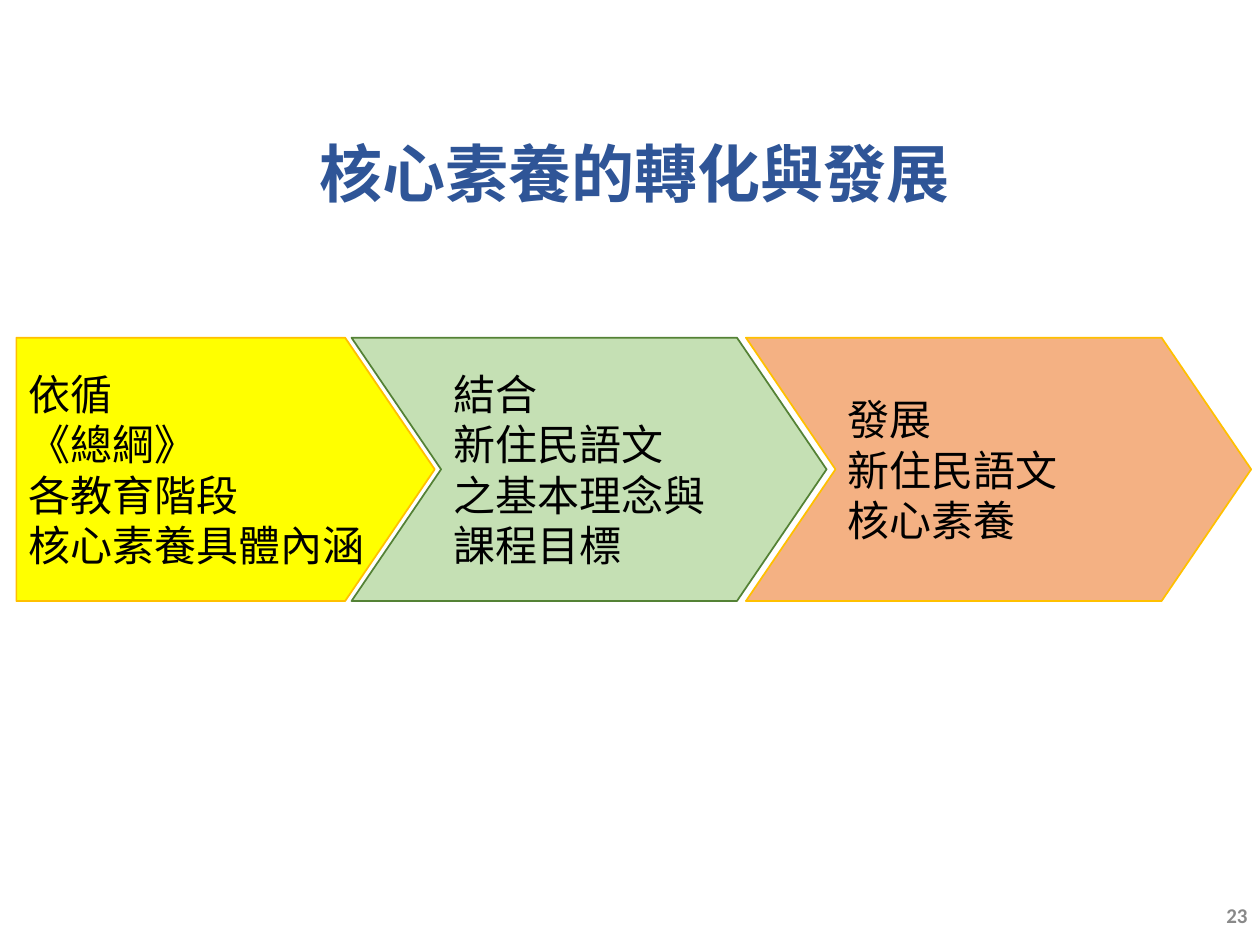
from lxml.etree import SubElement
from pptx import Presentation
from pptx.dml.color import RGBColor as RGB
from pptx.enum.shapes import MSO_SHAPE as Shape
from pptx.enum.text import MSO_ANCHOR as Anchor, PP_ALIGN as Align
from pptx.oxml.ns import qn
from pptx.util import Inches, Pt

# Content
TITLE = "核心素養的轉化與發展"
PAGE = "23"
# kind, left, width, fill, line, lines of text
STEPS = [
    (Shape.PENTAGON, 0.13, 3.32, "yellow", "gold",
     ["依循", "《總綱》", "各教育階段", "核心素養具體內涵"]),
    (Shape.CHEVRON, 2.79, 3.77, "green", "moss",
     ["結合", "新住民語文", "之基本理念與課程目標"]),
    (Shape.CHEVRON, 5.92, 4.01, "peach", "gold",
     ["發展", "新住民語文", "核心素養"]),
]
TOP, HIGH, POINT = 2.68, 2.09, 0.34

THEME = {
    "color": {"blue": "2F5597", "gray": "898989", "black": "000000",
              "yellow": "FFFF00", "green": "C5E0B4", "peach": "F4B183",
              "gold": "FFC000", "moss": "548235"},
    "size": {"title": 36, "step": 24, "page": 12},
    "font": {"title": "Noto Sans CJK SC", "step": "Noto Sans CJK SC",
             "page": "Calibri"},
}


def color(name):
    return RGB.from_string(THEME["color"][name])


def write(shape, lines, role, ink, align, bold=False, space=None):
    frame = shape.text_frame
    frame.word_wrap = True
    frame.vertical_anchor = Anchor.MIDDLE
    frame.text = "\n".join(lines)
    for para in frame.paragraphs:
        para.alignment = align
        para.line_spacing = space
        font = para.font
        font.size = Pt(THEME["size"][role])
        font.bold = bold
        font.color.rgb = color(ink)
        font.name = THEME["font"][role]
        # East Asian typeface
        props = para._p.pPr.find(qn("a:defRPr"))
        SubElement(props, qn("a:ea"), typeface=font.name)


deck = Presentation()
deck.slide_width, deck.slide_height = Inches(10), Inches(7.5)
slide = deck.slides.add_slide(deck.slide_layouts[6])
shapes = slide.shapes

# Title and page number
head = shapes.add_textbox(Inches(0.4), Inches(0.96), Inches(9.27), Inches(0.9))
write(head, [TITLE], "title", "blue", Align.CENTER, True, 0.9)
foot = shapes.add_textbox(Inches(7.75), Inches(7.06), Inches(2.25), Inches(0.4))
write(foot, [PAGE], "page", "gray", Align.RIGHT, True)

# Arrow steps
for kind, left, wide, fill, line, lines in STEPS:
    step = shapes.add_shape(kind, Inches(left), Inches(TOP),
                            Inches(wide), Inches(HIGH))
    step.adjustments[0] = POINT
    step.shadow.inherit = False
    step.fill.solid()
    step.fill.fore_color.rgb = color(fill)
    step.line.color.rgb = color(line)
    step.line.width = Pt(1)
    write(step, lines, "step", "black", Align.LEFT)

deck.save("out.pptx")
